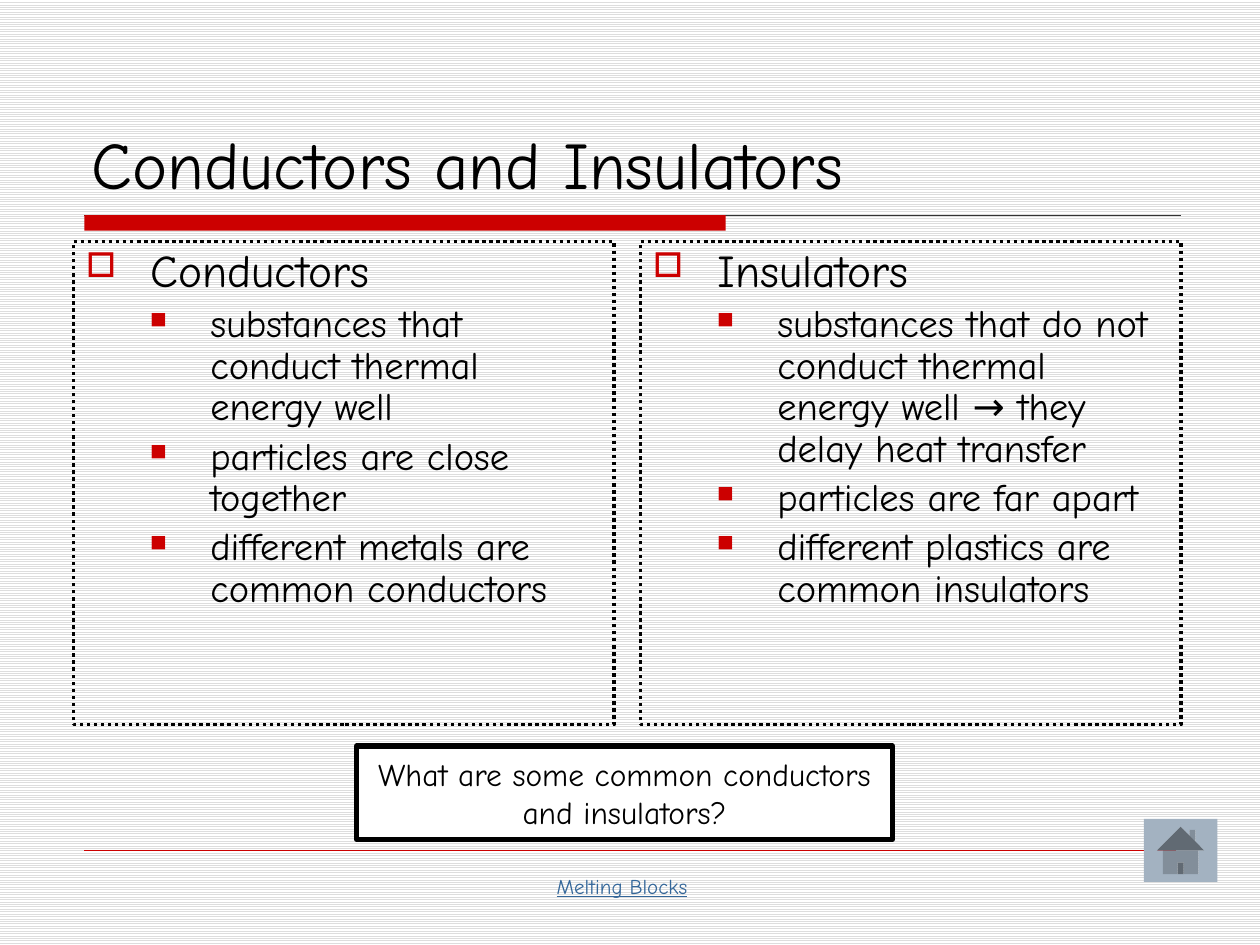
"""Build the Conductors and Insulators slide."""
from typing import NamedTuple

import pptx
import pptx.dml.color
import pptx.enum.dml
import pptx.enum.shapes
import pptx.enum.text
import pptx.oxml.ns
import pptx.util
from lxml import etree

Cm = pptx.util.Cm
Pt = pptx.util.Pt
qn = pptx.oxml.ns.qn
SHAPE = pptx.enum.shapes.MSO_SHAPE
ANCHOR = pptx.enum.text.MSO_ANCHOR
ALIGN = pptx.enum.text.PP_ALIGN
FONT = "Comic Neue"
BLACK, WHITE, RED = "000000", "FFFFFF", "CC0000"


class Box(NamedTuple):
    left: float
    top: float
    width: float
    height: float


class Level(NamedTuple):
    size: int
    indent: float
    hanging: float
    bullet: str
    bullet_pct: int


class Panel(NamedTuple):
    left: float
    heading: str
    points: tuple[str, ...]


HEADING = Level(26, 1.3, 1.3, "□", 75)
POINT = Level(22, 2.51, 1.22, "■", 60)
PANELS = (
    Panel(1.48, "Conductors", (
        "substances that conduct thermal energy well",
        "particles are close together",
        "different metals are common conductors",
    )),
    Panel(12.91, "Insulators", (
        "substances that do not conduct thermal energy well → they delay heat transfer",
        "particles are far apart",
        "different plastics are common insulators",
    )),
)


def rgb(value: str):
    return pptx.dml.color.RGBColor.from_string(value)


def place(box: Box) -> list:
    return [Cm(v) for v in box]


def add_shape(s, kind, box: Box, fill: str | None = None, line: str | None = None, width: float = 0):
    sp = s.shapes.add_shape(kind, *place(box))
    sp.shadow.inherit = False
    if fill:
        sp.fill.solid()
        sp.fill.fore_color.rgb = rgb(fill)
    else:
        sp.fill.background()
    if line:
        sp.line.color.rgb = rgb(line)
        sp.line.width = Pt(width)
    else:
        sp.line.fill.background()
    return sp


def add_rule(s, left: float, right: float, y: float, color: str, width: float) -> None:
    cxn = s.shapes.add_connector(pptx.enum.shapes.MSO_CONNECTOR.STRAIGHT, Cm(left), Cm(y), Cm(right), Cm(y))
    cxn.line.color.rgb = rgb(color)
    cxn.line.width = Pt(width)
    etree.SubElement(cxn._element.spPr, qn("a:effectLst"))


def write(p, text: str, size: int, color: str = BLACK, align=ALIGN.LEFT, underline: bool | None = None) -> None:
    p.text = text
    p.alignment = align
    for r in p.runs:
        r.font.name = FONT
        r.font.size = Pt(size)
        r.font.color.rgb = rgb(color)
        r.font.underline = underline


def add_text(s, box: Box, text: str, size: int, anchor=ANCHOR.TOP, **style) -> None:
    tf = s.shapes.add_textbox(*place(box)).text_frame
    tf.word_wrap = True
    tf.vertical_anchor = anchor
    write(tf.paragraphs[0], text, size, **style)


def write_bullet(p, text: str, level: Level) -> None:
    write(p, text, level.size)
    p.line_spacing = 0.9
    p.space_before = Pt(level.size * 0.2)
    pPr = p._p.get_or_add_pPr()
    pPr.set("marL", str(Cm(level.indent)))
    pPr.set("indent", str(-Cm(level.hanging)))
    color = etree.SubElement(pPr, qn("a:buClr"))
    etree.SubElement(color, qn("a:srgbClr"), val=RED)
    etree.SubElement(pPr, qn("a:buSzPct"), val=str(level.bullet_pct * 1000))
    etree.SubElement(pPr, qn("a:buChar"), char=level.bullet)


def add_panel(s, panel: Panel) -> None:
    sp = add_shape(s, SHAPE.RECTANGLE, Box(panel.left, 4.87, 10.9, 9.74), line=BLACK, width=2)
    sp.line.dash_style = pptx.enum.dml.MSO_LINE.ROUND_DOT
    tf = sp.text_frame
    tf.word_wrap = True
    tf.vertical_anchor = ANCHOR.TOP
    write_bullet(tf.paragraphs[0], panel.heading, HEADING)
    for point in panel.points:
        p = tf.add_paragraph()
        p.level = 1
        write_bullet(p, point, POINT)


def main() -> None:
    prs = pptx.Presentation()
    prs.slide_width, prs.slide_height = Cm(25.4), Cm(19.05)
    s = prs.slides.add_slide(prs.slide_layouts[6])

    fill = s.background.fill
    fill.patterned()
    fill.pattern = pptx.enum.dml.MSO_PATTERN.LIGHT_HORIZONTAL
    fill.fore_color.rgb = rgb("DDDDDD")
    fill.back_color.rgb = rgb(WHITE)

    add_rule(s, 1.7, 23.8, 4.34, "333333", 0.75)
    add_shape(s, SHAPE.RECTANGLE, Box(1.7, 4.34, 12.93, 0.31), RED)
    add_rule(s, 1.7, 23.7, 17.15, RED, 0.25)

    add_text(s, Box(1.6, 0.84, 22.22, 3.38), "Conductors and Insulators", 38, ANCHOR.BOTTOM)
    for panel in PANELS:
        add_panel(s, panel)

    sp = add_shape(s, SHAPE.RECTANGLE, Box(7.19, 15.04, 10.8, 1.88), WHITE, BLACK, 3)
    sp.text_frame.word_wrap = True
    write(sp.text_frame.paragraphs[0], "What are some common conductors and insulators?", 18, align=ALIGN.CENTER)

    add_shape(s, SHAPE.ACTION_BUTTON_HOME, Box(23.06, 16.51, 1.48, 1.27), "A3B2C1")
    add_text(s, Box(10.0, 17.48, 5.08, 0.76), "Melting Blocks", 12, color="336699", align=ALIGN.CENTER, underline=True)

    prs.save("out.pptx")


if __name__ == "__main__":
    main()
